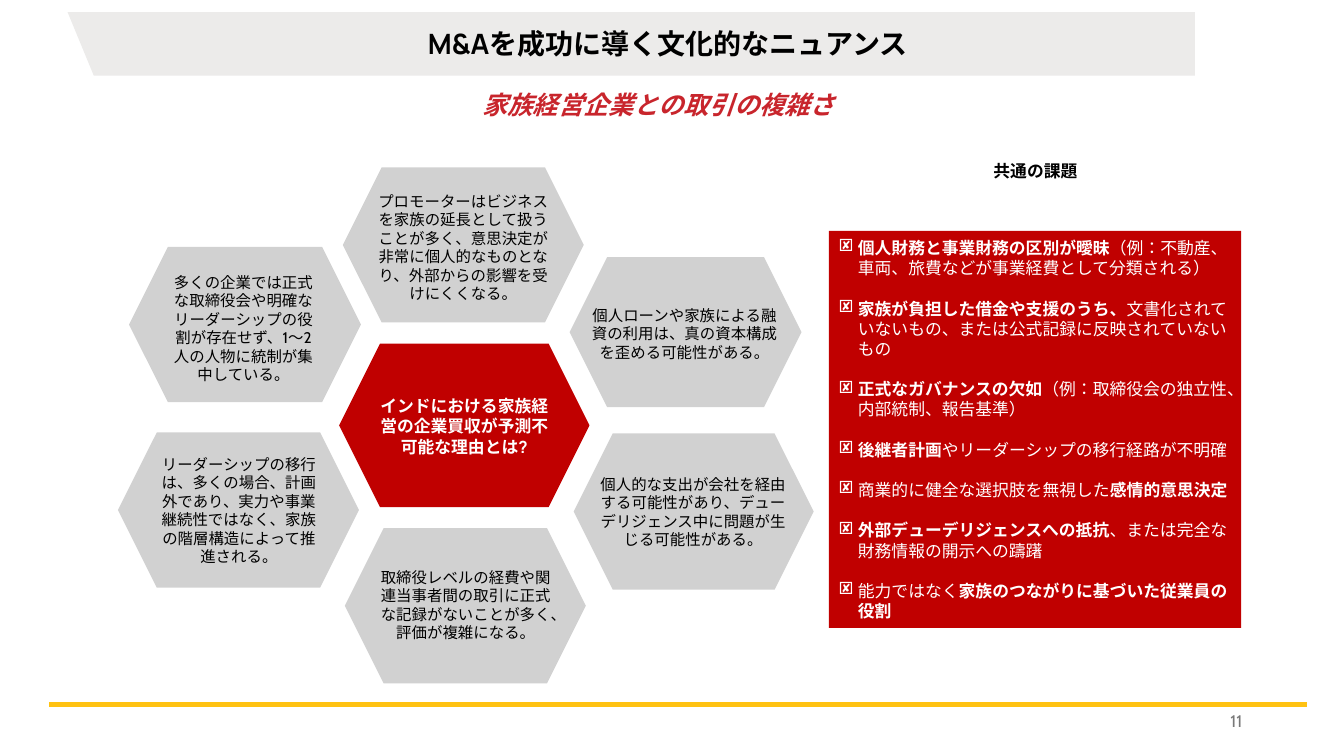
from dataclasses import dataclass

from lxml.etree import SubElement
from pptx import Presentation
from pptx.dml.color import RGBColor
from pptx.enum.lang import MSO_LANGUAGE_ID
from pptx.enum.shapes import MSO_CONNECTOR, MSO_SHAPE
from pptx.enum.text import MSO_ANCHOR, PP_ALIGN
from pptx.oxml.ns import qn
from pptx.util import Inches, Pt


@dataclass(frozen=True)
class Theme:
    """Colours, fonts and type sizes of the deck."""

    band: str = "ECEBEA"
    rule: str = "FFC212"
    accent: str = "C8252C"
    panel: str = "C00000"
    reason: str = "D1D1D1"
    ink: str = "000000"
    light: str = "FFFFFF"
    muted: str = "797979"
    heading_font: str = "Manrope"
    body_font: str = "Cabin"
    bullet_font: str = "Wingdings"
    title_size: int = 20
    subtitle_size: int = 18
    body_size: int = 12
    reason_size: int = 11


class SlideBuilder:
    """Draws styled elements on the current slide."""

    def __init__(self, slide, theme):
        """Keep the slide and its theme."""
        self.slide = slide
        self.theme = theme

    def run(self, paragraph, text, size, color, font, bold=False, italic=False):
        """Add one formatted run."""
        run = paragraph.add_run()
        run.text = text
        run.font.size = Pt(size)
        run.font.name = font
        run.font.bold = bold
        run.font.italic = italic
        run.font.color.rgb = RGBColor.from_string(color)
        run.font.language_id = MSO_LANGUAGE_ID.JAPANESE

    def paint(self, shape, fill, line_width=0):
        """Fill a shape flat, with a sharp outline of its own colour if wanted."""
        shape.shadow.inherit = False
        shape.fill.solid()
        shape.fill.fore_color.rgb = RGBColor.from_string(fill)
        if line_width:
            shape.line.color.rgb = RGBColor.from_string(fill)
            shape.line.width = Pt(line_width)
            SubElement(shape._element.spPr.find(qn("a:ln")), qn("a:miter")).set("lim", "800000")
        else:
            shape.line.fill.background()
        return shape

    def shape(self, kind, box, fill, line_width=0):
        """Add a preset shape."""
        shape = self.slide.shapes.add_shape(kind, *map(Inches, box))
        return self.paint(shape, fill, line_width)

    def outline(self, points, fill):
        """Add a closed polygon."""
        start, *rest = [(Inches(x), Inches(y)) for x, y in points]
        builder = self.slide.shapes.build_freeform(*start)
        builder.add_line_segments(rest, close=True)
        return self.paint(builder.convert_to_shape(), fill)

    def rule(self, start, end, color, width):
        """Add a straight line."""
        line = self.slide.shapes.add_connector(
            MSO_CONNECTOR.STRAIGHT, *map(Inches, start + end))
        line.line.color.rgb = RGBColor.from_string(color)
        line.line.width = Pt(width)
        SubElement(line._element.spPr, qn("a:effectLst"))

    def title(self, text, box):
        """Place and format the title placeholder."""
        title = self.slide.shapes.title
        title.left, title.top, title.width, title.height = map(Inches, box)
        frame = title.text_frame
        frame.margin_left = frame.margin_right = frame.margin_bottom = 0
        frame.margin_top = Inches(0.01)
        frame.vertical_anchor = MSO_ANCHOR.TOP
        paragraph = frame.paragraphs[0]
        paragraph.alignment = PP_ALIGN.CENTER
        paragraph.line_spacing = 0.9
        self.run(paragraph, text, self.theme.title_size, self.theme.ink,
                 self.theme.heading_font, bold=True)

    def text(self, text, box, size, color, font, bold=False, italic=False,
             align=PP_ALIGN.CENTER, anchor=MSO_ANCHOR.TOP, spacing=None):
        """Add a wrapped text box with one paragraph."""
        frame = self.slide.shapes.add_textbox(*map(Inches, box)).text_frame
        frame.word_wrap = True
        frame.vertical_anchor = anchor
        paragraph = frame.paragraphs[0]
        paragraph.alignment = align
        paragraph.line_spacing = spacing
        self.run(paragraph, text, size, color, font, bold, italic)

    def reason(self, text, hexagon, label):
        """Add a grey hexagon and its label."""
        self.shape(MSO_SHAPE.HEXAGON, hexagon, self.theme.reason)
        self.text(text, label, self.theme.reason_size, self.theme.ink,
                  self.theme.body_font, anchor=MSO_ANCHOR.MIDDLE)

    def checklist(self, items, box):
        """Add the panel of ticked items, each a list of (text, bold)."""
        frame = self.shape(MSO_SHAPE.RECTANGLE, box, self.theme.panel).text_frame
        frame.word_wrap = True
        frame.vertical_anchor = MSO_ANCHOR.MIDDLE
        for index, item in enumerate(items):
            paragraph = frame.add_paragraph() if index else frame.paragraphs[0]
            paragraph.alignment = PP_ALIGN.LEFT
            if index:
                paragraph.space_before = Pt(14.4)
            properties = paragraph._p.get_or_add_pPr()
            properties.set("marL", str(Inches(0.19)))
            properties.set("indent", str(-Inches(0.19)))
            bullet_font = SubElement(properties, qn("a:buFont"))
            bullet_font.set("typeface", self.theme.bullet_font)
            bullet_font.set("charset", "2")
            SubElement(properties, qn("a:buChar")).set("char", "ý")
            for text, bold in item:
                self.run(paragraph, text, self.theme.body_size, self.theme.light,
                         self.theme.body_font, bold)


REASONS = [
    ("プロモーターはビジネスを家族の延長として扱うことが多く、意思決定が非常に個人的なものとなり、外部からの影響を受けにくくなる。",
     (3.4, 1.66, 2.39, 1.54), (3.6, 1.85, 1.99, 1.21)),
    ("多くの企業では正式な取締役会や明確なリーダーシップの役割が存在せず、1～2人の人物に統制が集中している。",
     (1.28, 2.45, 2.3, 1.54), (1.57, 2.65, 1.69, 1.21)),
    ("個人ローンや家族による融資の利用は、真の資本構成を歪める可能性がある。",
     (5.65, 2.55, 2.3, 1.49), (5.77, 2.98, 2.04, 0.66)),
    ("個人的な支出が会社を経由する可能性があり、デューデリジェンス中に問題が生じる可能性がある。",
     (5.69, 4.3, 2.38, 1.55), (5.84, 4.66, 2.07, 0.84)),
    ("取締役レベルの経費や関連当事者間の取引に正式な記録がないことが多く、評価が複雑になる。",
     (3.42, 5.24, 2.39, 1.54), (3.66, 5.58, 1.92, 0.84)),
    ("リーダーシップの移行は、多くの場合、計画外であり、実力や事業継続性ではなく、家族の階層構造によって推進される。",
     (1.17, 4.29, 2.39, 1.54), (1.46, 4.46, 1.82, 1.21)),
]

CHALLENGES = [
    [("個人財務と事業財務の区別が曖昧", True),
     ("（例：不動産、車両、旅費などが事業経費として分類される）", False)],
    [("家族が負担した借金や支援のうち、", True),
     ("文書化されていないもの、または公式記録に反映されていないもの", False)],
    [("正式なガバナンスの欠如", True),
     ("（例：取締役会の独立性、内部統制、報告基準）", False)],
    [("後継者計画", True), ("やリーダーシップの移行経路が不明確", False)],
    [("商業的に健全な選択肢を無視した", False), ("感情的意思決定", True)],
    [("外部デューデリジェンスへの抵抗", True),
     ("、または完全な財務情報の開示への躊躇", False)],
    [("能力ではなく", False), ("家族のつながりに基づいた従業員の役割", True)],
]


def main():
    """Build the slide and save it."""
    deck = Presentation()
    deck.slide_width, deck.slide_height = Inches(13.33), Inches(7.5)
    theme = Theme()
    page = SlideBuilder(deck.slides.add_slide(deck.slide_layouts[5]), theme)

    page.outline([(0.67, 0.12), (11.85, 0.12), (11.85, 0.75), (0.93, 0.75)], theme.band)
    page.rule((0.49, 6.99), (12.96, 6.99), theme.rule, 3)
    page.title("M&Aを成功に導く文化的なニュアンス", (2.37, 0.29, 8.51, 0.32))
    page.slide.shapes._spTree.append(page.slide.shapes.title._element)
    page.text("家族経営企業との取引の複雑さ", (0.3, 0.84, 12.47, 0.41),
              theme.subtitle_size, theme.accent, theme.heading_font, bold=True, italic=True)

    page.checklist(CHALLENGES, (8.22, 2.29, 4.09, 3.94))
    page.text("共通の課題", (7.99, 1.57, 4.56, 0.32), theme.body_size, theme.ink,
              theme.heading_font, bold=True, spacing=0.9)

    page.shape(MSO_SHAPE.HEXAGON, (3.41, 3.45, 2.39, 1.54), theme.panel, line_width=6)
    for text, hexagon, label in REASONS:
        page.reason(text, hexagon, label)
    page.text("インドにおける家族経営の企業買収が予測不可能な理由とは?", (3.61, 3.88, 1.99, 1.04),
              theme.body_size, theme.light, theme.heading_font, bold=True)
    page.text("11", (9.42, 6.95, 3, 0.4), theme.body_size, theme.muted, theme.body_font,
              align=PP_ALIGN.RIGHT, anchor=MSO_ANCHOR.MIDDLE)

    deck.save("out.pptx")


if __name__ == "__main__":
    main()
